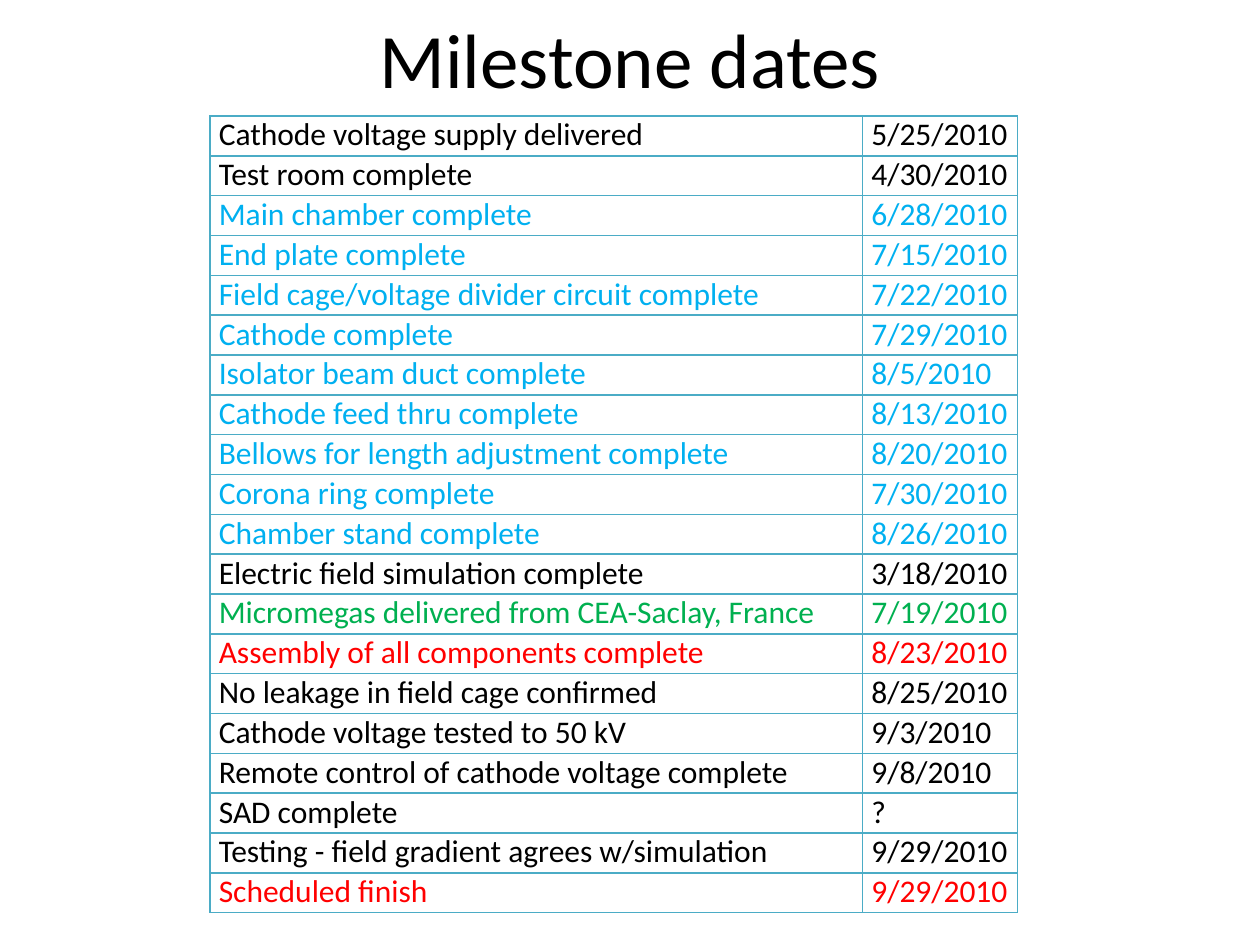
import pptx
import pptx.dml.color
import pptx.enum.text
import pptx.oxml
import pptx.oxml.ns
import pptx.util

WIDE, HIGH = 10, 7.5
FONT = "Calibri"
BLACK, BLUE, GREEN, RED = "000000", "00B0F0", "00B050", "FF0000"
EDGE = "4BACC6"
TOP = 0.92
COLS = (5.18, 1.23)
ROW = 6.33 / 20

# Task, date and text colour of each milestone
DATES = [
    ("Cathode voltage supply delivered", "5/25/2010", BLACK),
    ("Test room complete", "4/30/2010", BLACK),
    ("Main chamber complete", "6/28/2010", BLUE),
    ("End plate complete", "7/15/2010", BLUE),
    ("Field cage/voltage divider circuit complete", "7/22/2010", BLUE),
    ("Cathode complete", "7/29/2010", BLUE),
    ("Isolator beam duct complete", "8/5/2010", BLUE),
    ("Cathode feed thru complete", "8/13/2010", BLUE),
    ("Bellows for length adjustment complete", "8/20/2010", BLUE),
    ("Corona ring complete", "7/30/2010", BLUE),
    ("Chamber stand complete", "8/26/2010", BLUE),
    ("Electric field simulation complete", "3/18/2010", BLACK),
    ("Micromegas delivered from CEA-Saclay, France", "7/19/2010", GREEN),
    ("Assembly of all components complete", "8/23/2010", RED),
    ("No leakage in field cage confirmed", "8/25/2010", BLACK),
    ("Cathode voltage tested to 50 kV", "9/3/2010", BLACK),
    ("Remote control of cathode voltage complete", "9/8/2010", BLACK),
    ("SAD complete", "?", BLACK),
    ("Testing - field gradient agrees w/simulation", "9/29/2010", BLACK),
    ("Scheduled finish", "9/29/2010", RED),
]


def inch(size):
    return pptx.util.Inches(size)


def paint(color, code):
    color.rgb = pptx.dml.color.RGBColor.from_string(code)


def write(para, text, size, code):
    para.text = text
    para.font.name = FONT
    para.font.size = pptx.util.Pt(size)
    paint(para.font.color, code)


def add_title(slide, text):
    box = slide.shapes.add_textbox(
        inch(0.05 * WIDE), 0, inch(0.9 * WIDE), inch(TOP))
    frame = box.text_frame
    frame.word_wrap = True
    frame.vertical_anchor = pptx.enum.text.MSO_ANCHOR.MIDDLE
    para = frame.paragraphs[0]
    para.alignment = pptx.enum.text.PP_ALIGN.CENTER
    write(para, text, 44, BLACK)


def add_edges(cell):
    # Border lines come before the fill in the cell's properties
    space = pptx.oxml.ns.nsdecls("a")
    props = cell._tc.get_or_add_tcPr()
    for spot, side in enumerate("LRTB"):
        props.insert(spot, pptx.oxml.parse_xml(
            f'<a:ln{side} {space} w="12700"><a:solidFill>'
            f'<a:srgbClr val="{EDGE}"/></a:solidFill></a:ln{side}>'))


def fill_cell(cell, text, code):
    cell.margin_left = cell.margin_right = inch(0.07)
    cell.margin_top = cell.margin_bottom = 0
    cell.fill.background()
    add_edges(cell)
    write(cell.text_frame.paragraphs[0], text, 18, code)


def add_dates(slide):
    frame = slide.shapes.add_table(
        len(DATES), len(COLS), inch(WIDE / 6), inch(TOP),
        inch(sum(COLS)), inch(ROW * len(DATES)))
    table = frame.table
    table.first_row = table.horz_banding = False
    for col, width in zip(table.columns, COLS):
        col.width = inch(width)
    for row, (task, date, code) in zip(table.rows, DATES):
        row.height = inch(ROW)
        for cell, text in zip(row.cells, (task, date)):
            fill_cell(cell, text, code)


def main():
    deck = pptx.Presentation()
    deck.slide_width, deck.slide_height = inch(WIDE), inch(HIGH)
    slide = deck.slides.add_slide(deck.slide_layouts[6])
    add_title(slide, "Milestone dates")
    add_dates(slide)
    deck.save("out.pptx")


if __name__ == "__main__":
    main()
